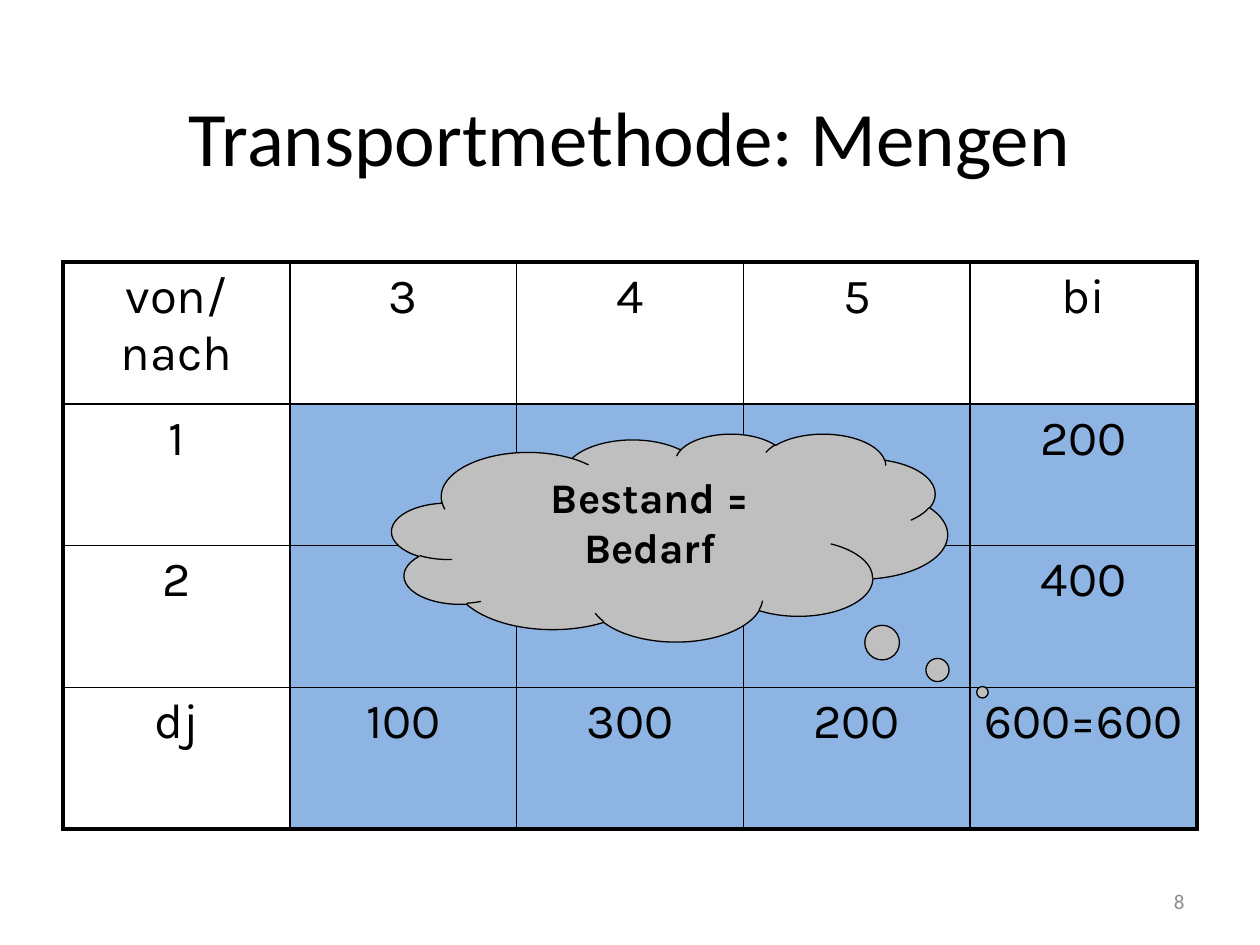
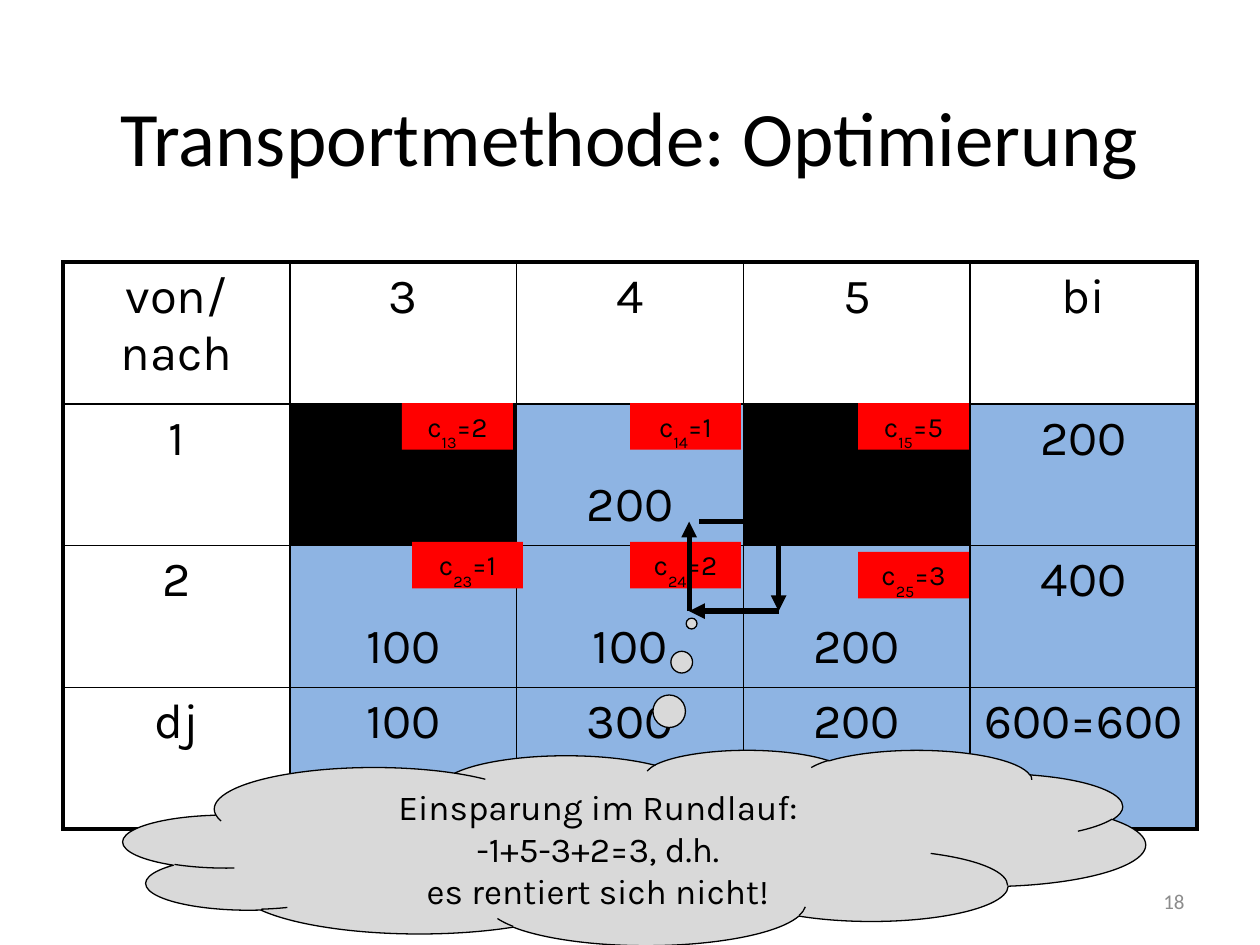
from itertools import pairwise

from lxml import etree
from pptx import Presentation
from pptx import util as u
from pptx.dml.color import RGBColor
from pptx.enum import shapes, text
from pptx.oxml import ns

BLACK = RGBColor(0x00, 0x00, 0x00)
WHITE = RGBColor(0xFF, 0xFF, 0xFF)
BLUE = RGBColor(0x8E, 0xB4, 0xE3)
RED = RGBColor(0xFF, 0x00, 0x00)
MID_GRAY = RGBColor(0xBF, 0xBF, 0xBF)
LIGHT_GRAY = RGBColor(0xD9, 0xD9, 0xD9)
NUMBER_GRAY = RGBColor(0x8C, 0x8C, 0x8C)

TITLE_FONT = "Calibri"
BODY_FONT = "Karla"
CENTER = text.PP_ALIGN.CENTER

TITLE_BOX = (0.5, 0.32, 9, 1.51)
TABLE_BOX = (0.5, 2.08, 9, 4.5)
NUMBER_BOX = (7.17, 6.95, 2.33, 0.4)
COST_SIZE = (0.88, 0.37)

HEADER = ["von/nach", "3", "4", "5", "bi"]
SUPPLY = [("1", "200"), ("2", "400")]
DEMAND = ["dj", "100", "300", "200", "600=600"]
SHIPMENT_TOP = 0.58  # top margin that puts a quantity below its cost label


def inches(box):
    return [u.Inches(length) for length in box]


def format_text(frame, size, font=BODY_FONT, color=BLACK, bold=False, align=CENTER):
    for paragraph in frame.paragraphs:
        paragraph.alignment = align
        for run in paragraph.runs:
            run.font.size = u.Pt(size)
            run.font.name = font
            run.font.color.rgb = color
            run.font.bold = bold


def add_text(slide, box, content, size, color, align):
    frame = slide.shapes.add_textbox(*inches(box)).text_frame
    frame.word_wrap = True
    frame.vertical_anchor = text.MSO_ANCHOR.MIDDLE
    frame.text = content
    format_text(frame, size, TITLE_FONT, color, align=align)


def add_filled_shape(slide, kind, box, fill):
    shape = slide.shapes.add_shape(kind, *inches(box))
    shape.shadow.inherit = False
    shape.fill.solid()
    shape.fill.fore_color.rgb = fill
    shape.line.fill.background()
    shape.text_frame.vertical_anchor = text.MSO_ANCHOR.TOP
    return shape


def set_borders(cell, widths):
    """Draw black borders; widths are points for left, right, top, bottom."""
    properties = cell._tc.get_or_add_tcPr()
    for index, (side, width) in enumerate(zip("LRTB", widths)):
        line = etree.Element(ns.qn(f"a:ln{side}"), w=str(u.Pt(width)))
        fill = etree.SubElement(line, ns.qn("a:solidFill"))
        etree.SubElement(fill, ns.qn("a:srgbClr"), val=str(BLACK))
        properties.insert(index, line)


def add_transport_table(slide, box, shipments, blocked=()):
    """Shipments and blocked cells are keyed by (row, column) of the table."""
    rows = [HEADER]
    rows += [[source, "", "", "", stock] for source, stock in SUPPLY]
    rows.append(DEMAND)
    last_row, last_column = len(rows) - 1, len(HEADER) - 1
    table = slide.shapes.add_table(len(rows), len(HEADER), *inches(box)).table
    table.first_row = table.horz_banding = False

    for row, values in enumerate(rows):
        for column, value in enumerate(values):
            place = (row, column)
            cell = table.cell(row, column)
            cell.text = shipments.get(place, value)
            if place in shipments:
                cell.margin_top = u.Inches(SHIPMENT_TOP)
            format_text(cell.text_frame, 28)
            cell.fill.solid()
            if place in blocked:
                cell.fill.fore_color.rgb = BLACK
            else:
                cell.fill.fore_color.rgb = BLUE if row and column else WHITE
            outer = (column == 0, column == last_column, row == 0, row == last_row)
            set_borders(cell, [2.25 if edge else 1 for edge in outer])


def add_cloud(slide, box, pointer, fill, lines, size, bold=False):
    cloud = add_filled_shape(slide, shapes.MSO_SHAPE.CLOUD_CALLOUT, box, fill)
    cloud.adjustments[0], cloud.adjustments[1] = pointer
    cloud.line.color.rgb = BLACK
    cloud.line.width = u.Pt(0.75)
    cloud.text_frame.text = "\n".join(lines)
    format_text(cloud.text_frame, size, bold=bold)


def add_cost_label(slide, left, top, route, cost):
    label = add_filled_shape(
        slide, shapes.MSO_SHAPE.RECTANGLE, (left, top, *COST_SIZE), RED)
    paragraph = label.text_frame.paragraphs[0]
    for part in ("c", route, f"={cost}"):
        paragraph.add_run().text = part
    format_text(label.text_frame, 16)
    paragraph.runs[1].font._element.set("baseline", "-40000")


def add_arrow(slide, start, end):
    arrow = slide.shapes.add_connector(
        shapes.MSO_CONNECTOR.STRAIGHT, *inches(start + end))
    arrow.line.color.rgb = BLACK
    arrow.line.width = u.Pt(3)
    etree.SubElement(arrow.line._get_or_add_ln(), ns.qn("a:tailEnd"), type="triangle")
    etree.SubElement(arrow._element.spPr, ns.qn("a:effectLst"))


def add_circuit(slide, left, top, right, bottom):
    """Closed loop of arrows; its first arrow starts just inside the corner."""
    corners = [(right, top), (right, bottom), (left, bottom), (left, top)]
    add_arrow(slide, (left + 0.08, top), corners[0])
    for start, end in pairwise(corners):
        add_arrow(slide, start, end)


def start_slide(presentation, title):
    slide = presentation.slides.add_slide(presentation.slide_layouts[6])
    add_text(slide, TITLE_BOX, title, 44, BLACK, CENTER)
    return slide


def add_slide_number(slide, number):
    add_text(slide, NUMBER_BOX, number, 12, NUMBER_GRAY, text.PP_ALIGN.RIGHT)


def build_quantities(presentation):
    slide = start_slide(presentation, "Transportmethode: Mengen")
    add_transport_table(slide, TABLE_BOX, shipments={})
    add_cloud(slide, (3.11, 3.44, 4.41, 1.65), (0.563, 0.745), MID_GRAY,
              ["Bestand = Bedarf"], 24, bold=True)
    add_slide_number(slide, "8")


def build_optimization(presentation):
    slide = start_slide(presentation, "Transportmethode: Optimierung")
    shipments = {(1, 2): "200", (2, 1): "100", (2, 2): "100", (2, 3): "200"}
    add_transport_table(slide, TABLE_BOX, shipments, blocked={(1, 1), (1, 3)})

    # Unit costs of each route
    costs = [
        (3.19, 3.2, "13", 2), (5, 3.2, "14", 1), (6.81, 3.2, "15", 5),
        (3.27, 4.3, "23", 1), (5, 4.3, "24", 2), (6.81, 4.38, "25", 3),
    ]
    for cost in costs:
        add_cost_label(slide, *cost)

    # Saving along the circuit
    add_cloud(slide, (0.98, 5.95, 8.11, 1.55), (0.056, -1.146), LIGHT_GRAY,
              ["Einsparung im Rundlauf:", "-1+5-3+2=3, d.h.",
               "es rentiert sich nicht!"], 20)
    add_circuit(slide, 5.47, 4.14, 6.18, 4.85)
    add_slide_number(slide, "18")


def main():
    presentation = Presentation()
    presentation.slide_width = u.Inches(10)
    presentation.slide_height = u.Inches(7.5)
    build_quantities(presentation)
    build_optimization(presentation)
    presentation.save("out.pptx")


if __name__ == "__main__":
    main()
